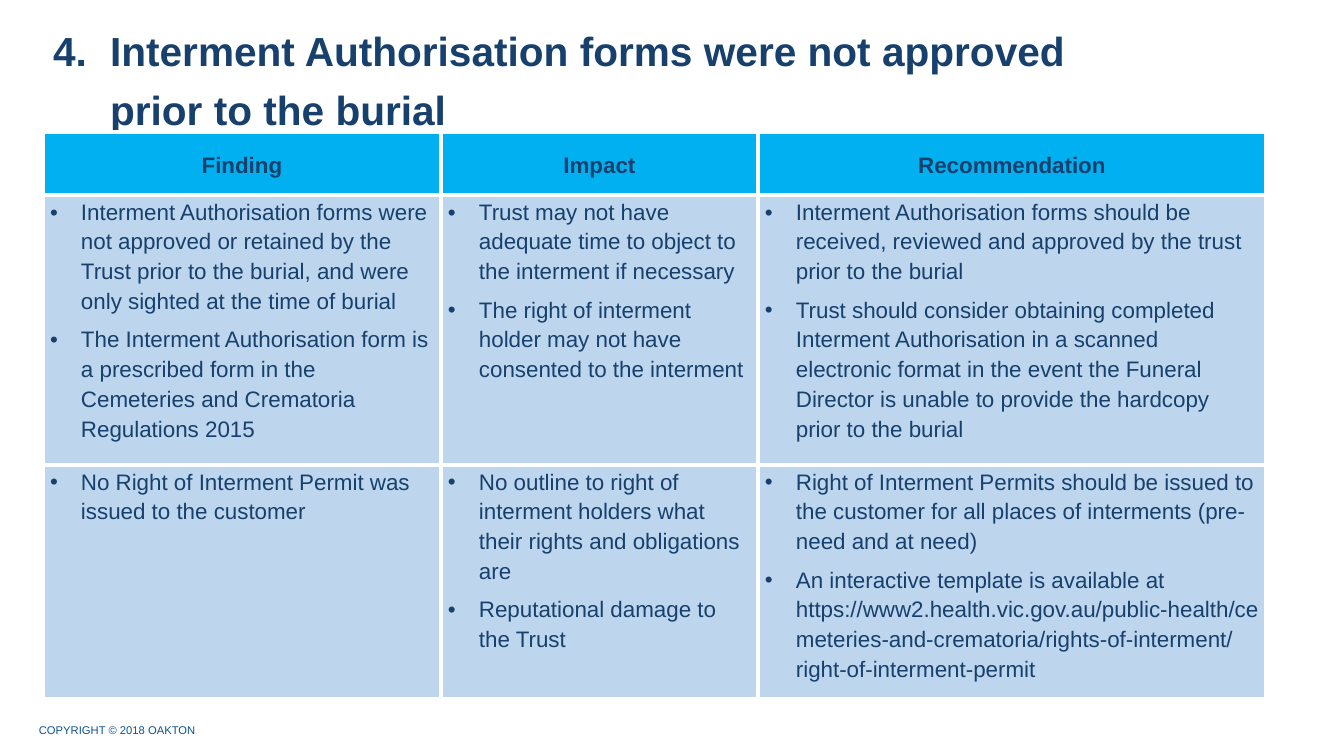
from lxml.etree import SubElement
from pptx import Presentation
from pptx.dml.color import RGBColor
from pptx.enum.text import MSO_ANCHOR, MSO_AUTO_SIZE, PP_ALIGN
from pptx.oxml import parse_xml
from pptx.oxml.ns import nsdecls, qn
from pptx.util import Emu, Pt

EMU_PER_PX = 914400 / 100.8
FONT = "Arial"
COLORS = {"navy": "17406D", "header": "00B0F0", "body": "BDD6EE",
          "border": "FFFFFF", "copyright": "0B5394"}

TITLE = "Interment Authorisation forms were not approved prior to the burial"
HEADINGS = ["Finding", "Impact", "Recommendation"]
FINDINGS = [
    [
        ["Interment Authorisation forms were not approved or retained by the Trust "
         "prior to the burial, and were only sighted at the time of burial",
         "The Interment Authorisation form is a prescribed form in the Cemeteries "
         "and Crematoria Regulations 2015"],
        ["Trust may not have adequate time to object to the interment if necessary",
         "The right of interment holder may not have consented to the interment"],
        ["Interment Authorisation forms should be received, reviewed and approved "
         "by the trust prior to the burial",
         "Trust should consider obtaining completed Interment Authorisation in a "
         "scanned electronic format in the event the Funeral Director is unable to "
         "provide the hardcopy prior to the burial"],
    ],
    [
        ["No Right of Interment Permit was issued to the customer"],
        ["No outline to right of interment holders what their rights and "
         "obligations are",
         "Reputational damage to the Trust"],
        ["Right of Interment Permits should be issued to the customer for all "
         "places of interments (pre-need and at need)",
         "An interactive template is available at "
         "https://www2.health.vic.gov.au/public-health/cemeteries-and-crematoria/"
         "rights-of-interment/right-of-interment-permit"],
    ],
]
COLUMN_WIDTHS = [398, 317, 508]
ROW_HEIGHTS = [63, 270, 217]


def px(length):
    return Emu(round(length * EMU_PER_PX))


def rgb(name):
    return RGBColor.from_string(COLORS[name])


def set_font(paragraph, size, color, bold=False):
    font = paragraph.font
    font.name, font.size, font.bold = FONT, Pt(size), bold
    font.color.rgb = rgb(color)


def set_marker(paragraph, indent, tag, **attributes):
    """Hang the paragraph behind a bullet or a number."""
    properties = paragraph._p.get_or_add_pPr()
    properties.set("marL", str(px(indent)))
    properties.set("indent", str(-px(indent)))
    SubElement(properties, qn("a:buFont")).set("typeface", FONT)
    marker = SubElement(properties, qn(tag))
    for key, value in attributes.items():
        marker.set(key, value)


def style_cell(cell, fill):
    cell.margin_left = cell.margin_right = px(7)
    cell.margin_top = cell.margin_bottom = 0
    cell.fill.solid()
    cell.fill.fore_color.rgb = rgb(fill)
    for position, side in enumerate(["lnL", "lnR", "lnT", "lnB"]):
        border = parse_xml(
            f'<a:{side} {nsdecls("a")} w="{Pt(3)}"><a:solidFill>'
            f'<a:srgbClr val="{COLORS["border"]}"/></a:solidFill></a:{side}>')
        cell._tc.get_or_add_tcPr().insert(position, border)


def fill_heading(cell, heading):
    style_cell(cell, "header")
    cell.vertical_anchor = MSO_ANCHOR.MIDDLE
    paragraph = cell.text_frame.paragraphs[0]
    paragraph.text = heading
    paragraph.alignment = PP_ALIGN.CENTER
    paragraph.line_spacing = 1.2
    paragraph.space_after = Pt(3)
    set_font(paragraph, 16, "navy", bold=True)


def fill_points(cell, points):
    style_cell(cell, "body")
    cell.vertical_anchor = MSO_ANCHOR.TOP
    cell.text_frame.text = "\n".join(points)
    for index, paragraph in enumerate(cell.text_frame.paragraphs):
        set_marker(paragraph, 31, "a:buChar", char="•")
        paragraph.line_spacing = 1.2
        paragraph.space_before = Pt(3 if index else 0)
        paragraph.space_after = Pt(3)
        set_font(paragraph, 16, "navy")


def add_title(slide):
    title = slide.shapes.title
    title.left, title.top, title.width, title.height = map(px, (43, 29, 1105, 92))
    frame = title.text_frame
    frame.text = TITLE
    frame.word_wrap = True
    frame.auto_size = MSO_AUTO_SIZE.NONE
    frame.vertical_anchor = MSO_ANCHOR.MIDDLE
    paragraph = frame.paragraphs[0]
    set_marker(paragraph, 57, "a:buAutoNum", type="arabicPeriod", startAt="4")
    paragraph.alignment = PP_ALIGN.LEFT
    paragraph.line_spacing = 1.2
    paragraph.space_before = Pt(0)
    paragraph.space_after = Pt(2)
    set_font(paragraph, 29, "navy", bold=True)


def add_findings_table(slide):
    table = slide.shapes.add_table(
        len(ROW_HEIGHTS), len(COLUMN_WIDTHS), px(43), px(132),
        px(sum(COLUMN_WIDTHS)), px(sum(ROW_HEIGHTS))).table
    for column, width in zip(table.columns, COLUMN_WIDTHS):
        column.width = px(width)
    for row, height in zip(table.rows, ROW_HEIGHTS):
        row.height = px(height)
    for column, heading in enumerate(HEADINGS):
        fill_heading(table.cell(0, column), heading)
    for row, finding in enumerate(FINDINGS, start=1):
        for column, points in enumerate(finding):
            fill_points(table.cell(row, column), points)


def add_copyright(slide):
    box = slide.shapes.add_textbox(px(29), px(718), px(499), px(24))
    box.text_frame.word_wrap = True
    paragraph = box.text_frame.paragraphs[0]
    paragraph.text = "COPYRIGHT © 2018 OAKTON"
    set_font(paragraph, 8, "copyright")


def main():
    presentation = Presentation()
    presentation.slide_width, presentation.slide_height = px(1344), px(756)
    title_only = presentation.slide_layouts[5]
    slide = presentation.slides.add_slide(title_only)

    # Footer line, numbered title, then the findings
    add_copyright(slide)
    add_title(slide)
    add_findings_table(slide)
    presentation.save("out.pptx")


if __name__ == "__main__":
    main()
